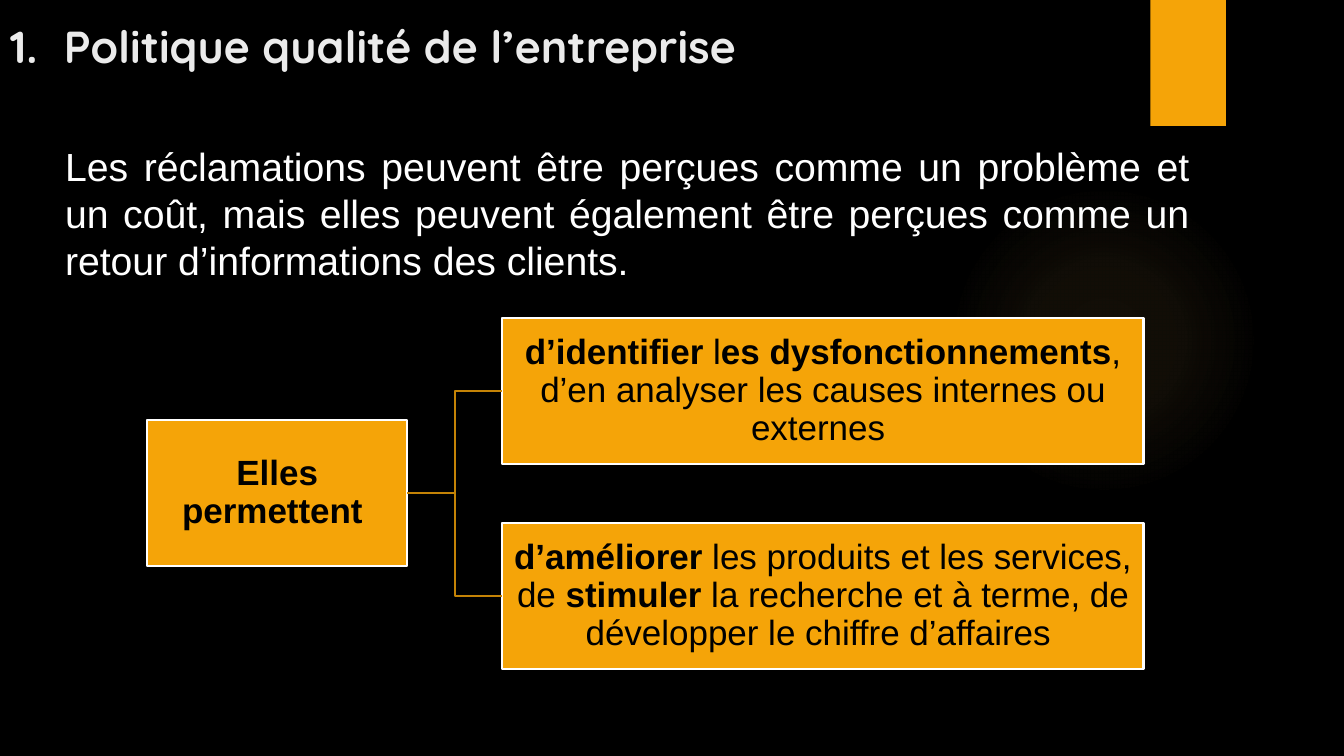
from lxml.etree import SubElement
from pptx import Presentation
from pptx.dml.color import RGBColor
from pptx.enum.shapes import MSO_CONNECTOR, MSO_SHAPE
from pptx.enum.text import MSO_ANCHOR, PP_ALIGN
from pptx.oxml import parse_xml
from pptx.oxml.ns import nsdecls, qn
from pptx.util import Pt

COLORS = {
    "background": "000000",
    "accent": "F5A408",
    "branch": "C48306",
    "glow": "FAC96A",
    "title": "EBEBEB",
    "white": "FFFFFF",
    "black": "000000",
}
TITLE_FONT = {"name": "Quicksand", "size": Pt(32), "bold": True}
BODY_FONT = {"name": "Arial", "size": Pt(28)}
BOX_FONT = {"name": "Arial", "size": Pt(25)}

TITLE = "1.\tPolitique qualité de l’entreprise"
INTRO = ("Les réclamations peuvent être perçues comme un problème et un coût, "
         "mais elles peuvent également être perçues comme un retour "
         "d’informations des clients.")
# Each box text is a list of (text, bold) runs
ROOT = [("Elles permettent ", True)]
BENEFITS = [
    [("d’identifier", True), (" l", False), ("es dysfonctionnements", True),
     (", d’en analyser les causes internes ou externes ", False)],
    [("d’améliorer", True), (" les produits et les services, de ", False),
     ("stimuler", True),
     (" la recherche et à terme, de développer le chiffre d’affaires ", False)],
]
BOX_HEIGHT = 104.6
BENEFIT_TOP, BENEFIT_STEP = 227, 146.6


def rgb(name):
    return RGBColor.from_string(COLORS[name])


def set_attrs(obj, values):
    for name, value in values.items():
        setattr(obj, name, value)


def add_run(p, text, font, color, **extra):
    r = p.add_run()
    r.text = text
    set_attrs(r.font, {**font, **extra})
    r.font.color.rgb = rgb(color)


def add_plain_shape(s, kind, x, y, w, h):
    sp = s.shapes.add_shape(kind, Pt(x), Pt(y), Pt(w), Pt(h))
    sp.shadow.inherit = False
    sp.fill.solid()
    sp.fill.fore_color.rgb = rgb("accent")
    sp.line.fill.background()
    return sp


def add_glow(s, x, y, size):
    """Circle with a faint radial gradient that fades out at its rim."""
    sp = add_plain_shape(s, MSO_SHAPE.OVAL, x, y, size, size)
    stops = "".join(
        f'<a:gs pos="{pos * 1000}"><a:srgbClr val="{COLORS["glow"]}">'
        f'<a:alpha val="{alpha * 1000}"/></a:srgbClr></a:gs>'
        for pos, alpha in ((0, 7), (36, 6), (69, 0)))
    gradient = parse_xml(
        f'<a:gradFill {nsdecls("a")}><a:gsLst>{stops}</a:gsLst>'
        '<a:path path="circle"><a:fillToRect l="50000" t="50000" '
        'r="50000" b="50000"/></a:path></a:gradFill>')
    solid = sp._element.spPr.find(qn("a:solidFill"))
    solid.getparent().replace(solid, gradient)


def set_title(s):
    sp = s.shapes.title
    set_attrs(sp, {"left": Pt(0), "top": Pt(0),
                   "width": Pt(713), "height": Pt(55.4)})
    sp.text_frame.vertical_anchor = MSO_ANCHOR.BOTTOM
    p = sp.text_frame.paragraphs[0]
    p.alignment = PP_ALIGN.LEFT
    tabs = SubElement(p._p.get_or_add_pPr(), qn("a:tabLst"))
    SubElement(tabs, qn("a:tab"), pos=str(Pt(38.5)), algn="l")
    add_run(p, TITLE, TITLE_FONT, "title")


def add_intro(s, x, y, w, h):
    tf = s.shapes.add_textbox(Pt(x), Pt(y), Pt(w), Pt(h)).text_frame
    tf.word_wrap = True
    p = tf.paragraphs[0]
    p.alignment = PP_ALIGN.JUSTIFY
    add_run(p, INTRO, BODY_FONT, "white")


def add_box(s, x, y, w, runs):
    sp = add_plain_shape(s, MSO_SHAPE.RECTANGLE, x, y, w, BOX_HEIGHT)
    sp.line.color.rgb = rgb("white")
    sp.line.width = Pt(1.5)
    tf = sp.text_frame
    sides = ("left", "top", "right", "bottom")
    set_attrs(tf, {f"margin_{side}": Pt(1.25) for side in sides})
    set_attrs(tf, {"word_wrap": True, "vertical_anchor": MSO_ANCHOR.MIDDLE})
    p = tf.paragraphs[0]
    set_attrs(p, {"alignment": PP_ALIGN.CENTER, "line_spacing": 0.9})
    for text, bold in runs:
        add_run(p, text, BOX_FONT, "black", bold=bold)
    return sp


def add_branch(s, start, end):
    """Elbow line from the right side of start to the left side of end."""
    line = s.shapes.add_connector(MSO_CONNECTOR.ELBOW, 0, 0, 0, 0)
    line.begin_connect(start, 3)
    line.end_connect(end, 1)
    line.line.color.rgb = rgb("branch")
    line.line.width = Pt(1.5)
    SubElement(line._element.spPr, qn("a:effectLst"))


def main():
    prs = Presentation()
    set_attrs(prs, {"slide_width": Pt(960), "slide_height": Pt(540)})
    s = prs.slides.add_slide(prs.slide_layouts[5])
    s.background.fill.solid()
    s.background.fill.fore_color.rgb = rgb("background")

    add_glow(s, 677.5, 131.8, 221.8)
    add_plain_shape(s, MSO_SHAPE.RECTANGLE, 821.7, 0, 54, 90)
    set_title(s)
    add_intro(s, 39.4, 98, 817, 108.7)

    root = add_box(s, 105, 300, 186, ROOT)
    for i, runs in enumerate(BENEFITS):
        box = add_box(s, 358.8, BENEFIT_TOP + i * BENEFIT_STEP, 458, runs)
        add_branch(s, root, box)
    prs.save("out.pptx")


if __name__ == "__main__":
    main()
